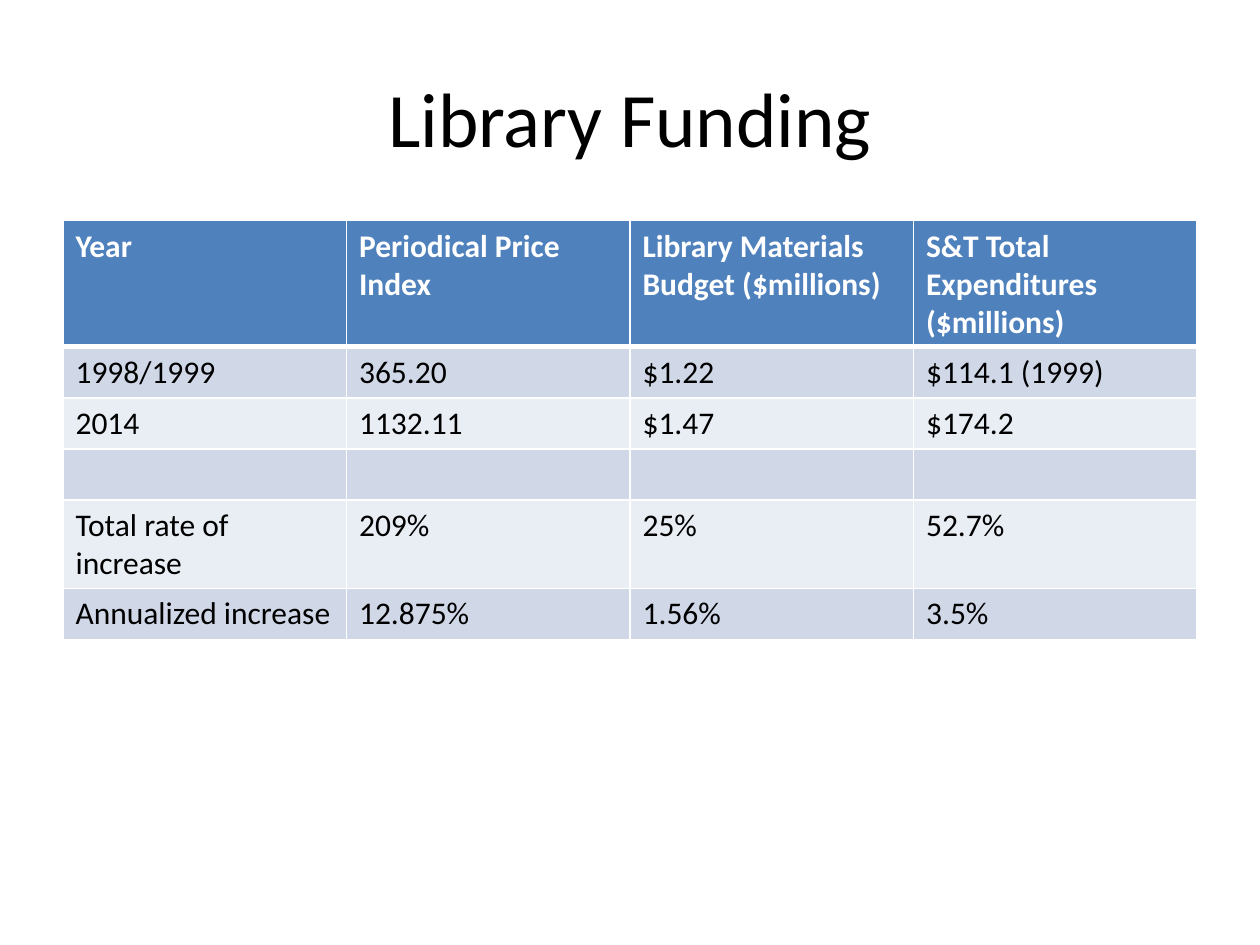
import pptx
import pptx.util
import pptx.dml.color
import pptx.enum.text
import pptx.oxml
import pptx.oxml.ns
from pptx.util import Cm

FONT = "Calibri"
WHITE, BLACK = "FFFFFF", "000000"
BLUE, BANDS = "4F81BD", ("E9EDF4", "D0D8E8")
ROWS = [
    ("Year", "Periodical Price Index", "Library Materials Budget ($millions)",
     "S&T Total Expenditures ($millions)"),
    ("1998/1999", "365.20", "$1.22", "$114.1 (1999)"),
    ("2014", "1132.11", "$1.47", "$174.2"),
    ("", "", "", ""),
    ("Total rate of increase", "209%", "25%", "52.7%"),
    ("Annualized increase", "12.875%", "1.56%", "3.5%"),
]


def color(code):
    return pptx.dml.color.RGBColor.from_string(code)


def style(para, size, code, bold=False):
    para.font.name = FONT
    para.font.size = pptx.util.Pt(size)
    para.font.bold = bold
    para.font.color.rgb = color(code)


def border(cell, side, width):
    props = cell._tc.get_or_add_tcPr()
    line = pptx.oxml.parse_xml(
        f'<a:ln{side} {pptx.oxml.ns.nsdecls("a")} w="{pptx.util.Pt(width)}">'
        f'<a:solidFill><a:srgbClr val="{WHITE}"/></a:solidFill></a:ln{side}>')
    props.append(line)


def add_title(slide, text):
    box = slide.shapes.add_textbox(Cm(1.27), Cm(0.76), Cm(22.86), Cm(3.18))
    frame = box.text_frame
    frame.word_wrap = True
    frame.vertical_anchor = pptx.enum.text.MSO_ANCHOR.MIDDLE
    para = frame.paragraphs[0]
    para.text = text
    para.alignment = pptx.enum.text.PP_ALIGN.CENTER
    style(para, 44, BLACK)


def fill_cell(cell, text, row):
    head = row == 0
    cell.text = text
    style(cell.text_frame.paragraphs[0], 18, WHITE if head else BLACK, head)
    # A thick rule parts the header from the body
    widths = {"L": 1, "R": 1, "T": 3 if row == 1 else 1, "B": 3 if head else 1}
    for side, width in widths.items():
        border(cell, side, width)
    cell.fill.solid()
    cell.fill.fore_color.rgb = color(BLUE if head else BANDS[row % 2])


def add_grid(slide, rows):
    high = Cm(1.03)
    frame = slide.shapes.add_table(len(rows), len(rows[0]), Cm(1.27), Cm(4.45),
                                   Cm(22.86), high * len(rows))
    table = frame.table
    table.horz_banding = False
    for r, texts in enumerate(rows):
        table.rows[r].height = high
        for c, text in enumerate(texts):
            fill_cell(table.cell(r, c), text, r)


def main():
    deck = pptx.Presentation()
    deck.slide_width, deck.slide_height = Cm(25.4), Cm(19.05)
    slide = deck.slides.add_slide(deck.slide_layouts[6])
    # Heading
    add_title(slide, "Library Funding")
    # Funding figures
    add_grid(slide, ROWS)
    deck.save("out.pptx")


if __name__ == "__main__":
    main()
